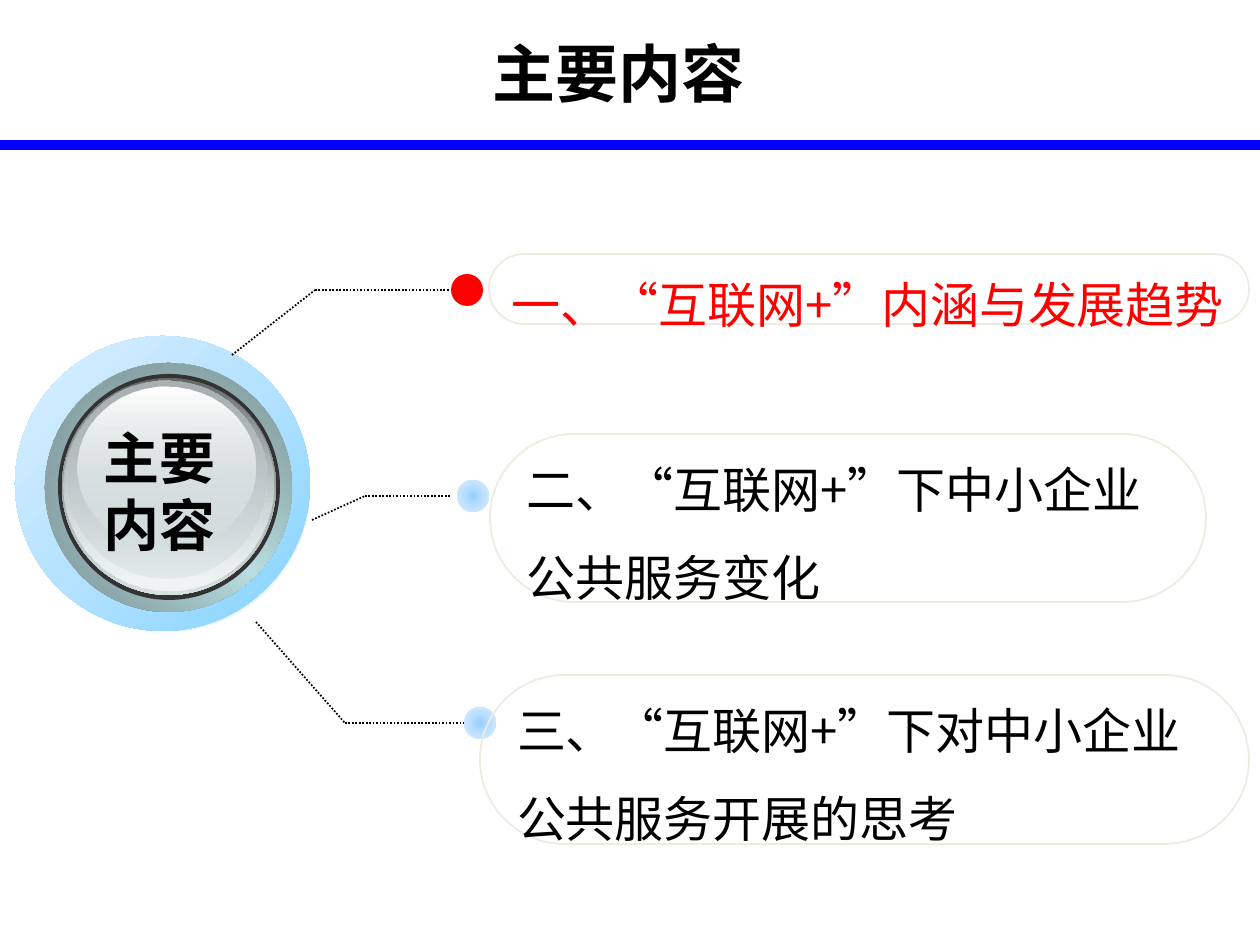
import dataclasses
import itertools
import typing

import lxml.etree
import pptx
import pptx.dml.color
import pptx.enum.dml
import pptx.enum.lang
import pptx.enum.shapes
import pptx.enum.text
import pptx.oxml
import pptx.oxml.ns
import pptx.util

SCALE = 914400 / 126
KIND = pptx.enum.shapes.MSO_SHAPE
ALIGN = pptx.enum.text.PP_ALIGN
MIDDLE = pptx.enum.text.MSO_ANCHOR.MIDDLE
DOTS = pptx.enum.dml.MSO_LINE.ROUND_DOT


@dataclasses.dataclass(frozen=True)
class Theme:
    font: str = "Noto Sans CJK SC"
    ink: str = "000000"
    hot: str = "FF0000"
    rule: str = "0000FF"
    edge: str = "EEECE1"
    rim: str = "333333"
    head: int = 36
    hub: int = 32
    item: int = 28


class Box(typing.NamedTuple):
    left: int
    top: int
    width: int
    height: int


class Stop(typing.NamedTuple):
    at: int
    color: str
    alpha: int = 100


class Grad(typing.NamedTuple):
    stops: tuple[Stop, ...]
    angle: int | None = None


class Disc(typing.NamedTuple):
    box: Box
    fill: Grad | str


class Item(typing.NamedTuple):
    lines: tuple[str, ...]
    color: str
    box: Box
    dot: Disc
    route: tuple[tuple[int, int], ...]


THEME = Theme()
GLOW = Grad((Stop(0, "96D0FF"), Stop(50, "BFE1FF"), Stop(100, "E0EFFF")))
DISCS = (
    Disc(Box(26, 344, 284, 287),
         Grad((Stop(0, "FFFFFF"), Stop(50, "BBE0E3"), Stop(100, "FFFFFF")), 45)),
    Disc(Box(15, 336, 295, 295),
         Grad((Stop(0, "83D3FF"), Stop(50, "B5E2FF"), Stop(100, "DBF0FF")), 225)),
    Disc(Box(45, 363, 247, 249),
         Grad((Stop(0, "65797B"), Stop(50, "BBE0E3"), Stop(100, "65797B")), 315)),
    Disc(Box(45, 363, 247, 249),
         Grad((Stop(0, "778E90"), Stop(100, "BBE0E3", 0)), 45)),
    Disc(Box(58, 374, 222, 226), THEME.rim),
    Disc(Box(62, 378, 214, 217),
         Grad((Stop(0, "636869"), Stop(100, "D6E1E2")), 90)),
    Disc(Box(64, 379, 209, 212),
         Grad((Stop(0, "D6E1E2", 0), Stop(100, "F1F5F5")), 90)),
    Disc(Box(67, 381, 199, 198),
         Grad((Stop(0, "AAB2B3"), Stop(100, "D6E1E2", 48)), 90)),
    Disc(Box(78, 387, 178, 161),
         Grad((Stop(0, "FFFFFF"), Stop(100, "D6E1E2", 38)), 90)),
)
ITEMS = (
    Item(("一、“互联网+”内涵与发展趋势",), THEME.hot, Box(489, 254, 760, 70),
         Disc(Box(451, 274, 32, 32), THEME.hot),
         ((232, 355), (315, 290), (449, 290))),
    Item(("二、“互联网+”下中小企业", "公共服务变化"), THEME.ink,
         Box(490, 434, 716, 168), Disc(Box(457, 480, 32, 32), GLOW),
         ((312, 520), (365, 496), (451, 496))),
    Item(("三、“互联网+”下对中小企业", "公共服务开展的思考"), THEME.ink,
         Box(480, 675, 769, 169), Disc(Box(464, 707, 32, 32), GLOW),
         ((256, 622), (345, 723), (465, 723))),
)


def px(size: int) -> int:
    return round(size * SCALE)


def rgb(code: str):
    return pptx.dml.color.RGBColor.from_string(code)


def style(part, values: dict) -> None:
    for name, value in values.items():
        setattr(part, name, value)


def shade(shape, grad: Grad) -> None:
    shape.fill.background()
    spot = shape._element.spPr.find(pptx.oxml.ns.qn("a:noFill"))
    stops = "".join(
        f'<a:gs pos="{stop.at * 1000}"><a:srgbClr val="{stop.color}">'
        f'<a:alpha val="{stop.alpha * 1000}"/></a:srgbClr></a:gs>'
        for stop in grad.stops)
    if grad.angle is None:
        flow = ('<a:path path="circle"><a:fillToRect l="50000" t="50000" '
                'r="50000" b="50000"/></a:path>')
    else:
        flow = f'<a:lin ang="{grad.angle * 60000}" scaled="0"/>'
    node = pptx.oxml.parse_xml(
        f'<a:gradFill {pptx.oxml.ns.nsdecls("a")} rotWithShape="1">'
        f'<a:gsLst>{stops}</a:gsLst>{flow}</a:gradFill>')
    spot.getparent().replace(spot, node)


def write(frame, lines: tuple[str, ...], size: int, color: str,
          bold: bool, para: dict, body: dict) -> None:
    style(frame, body)
    face = {"name": THEME.font, "size": pptx.util.Pt(size), "bold": bold,
            "language_id": pptx.enum.lang.MSO_LANGUAGE_ID.SIMPLIFIED_CHINESE}
    for rank, line in enumerate(lines):
        part = frame.add_paragraph() if rank else frame.paragraphs[0]
        style(part, para)
        run = part.add_run()
        run.text = line
        style(run.font, face)
        run.font.color.rgb = rgb(color)
        lxml.etree.SubElement(run.font._element, pptx.oxml.ns.qn("a:ea"),
                              typeface=THEME.font)


def link(slide, start: tuple[int, int], end: tuple[int, int],
         color: str, look: dict) -> None:
    line = slide.shapes.add_connector(
        pptx.enum.shapes.MSO_CONNECTOR.STRAIGHT, *map(px, start + end))
    line.line.color.rgb = rgb(color)
    style(line.line, look)
    lxml.etree.SubElement(line._element.spPr, pptx.oxml.ns.qn("a:effectLst"))


def draw_disc(slide, disc: Disc) -> None:
    shape = slide.shapes.add_shape(KIND.OVAL, *map(px, disc.box))
    shape.shadow.inherit = False
    shape.line.fill.background()
    if isinstance(disc.fill, Grad):
        shade(shape, disc.fill)
    else:
        shape.fill.solid()
        shape.fill.fore_color.rgb = rgb(disc.fill)


def draw_item(slide, item: Item) -> None:
    for start, end in itertools.pairwise(item.route):
        link(slide, start, end, THEME.ink,
             {"width": pptx.util.Pt(1), "dash_style": DOTS})
    draw_disc(slide, item.dot)
    pill = slide.shapes.add_shape(KIND.ROUNDED_RECTANGLE, *map(px, item.box))
    pill.adjustments[0] = 0.5
    pill.shadow.inherit = False
    pill.fill.background()
    pill.line.color.rgb = rgb(THEME.edge)
    pill.line.width = pptx.util.Pt(1)
    write(pill.text_frame, item.lines, THEME.item, item.color, False,
          {"alignment": ALIGN.LEFT, "line_spacing": 1.5},
          {"word_wrap": False, "vertical_anchor": MIDDLE})


def main() -> None:
    deck = pptx.Presentation()
    style(deck, {"slide_width": px(1260), "slide_height": px(945)})
    slide = deck.slides.add_slide(deck.slide_layouts[5])
    link(slide, (0, 145), (1260, 145), THEME.rule, {"width": pptx.util.Pt(6)})
    title = slide.shapes.title
    style(title, dict(zip(("left", "top", "width", "height"),
                          map(px, Box(40, 0, 1158, 145)))))
    write(title.text_frame, ("主要内容",), THEME.head, THEME.ink, True,
          {"alignment": ALIGN.CENTER},
          {"word_wrap": True, "vertical_anchor": MIDDLE})
    for disc in DISCS:
        draw_disc(slide, disc)
    hub = slide.shapes.add_textbox(*map(px, Box(37, 417, 246, 115)))
    write(hub.text_frame, ("主要", "内容"), THEME.hub, THEME.ink, True,
          {"alignment": ALIGN.CENTER}, {"word_wrap": True})
    for item in ITEMS:
        draw_item(slide, item)
    deck.save("out.pptx")


if __name__ == "__main__":
    main()
